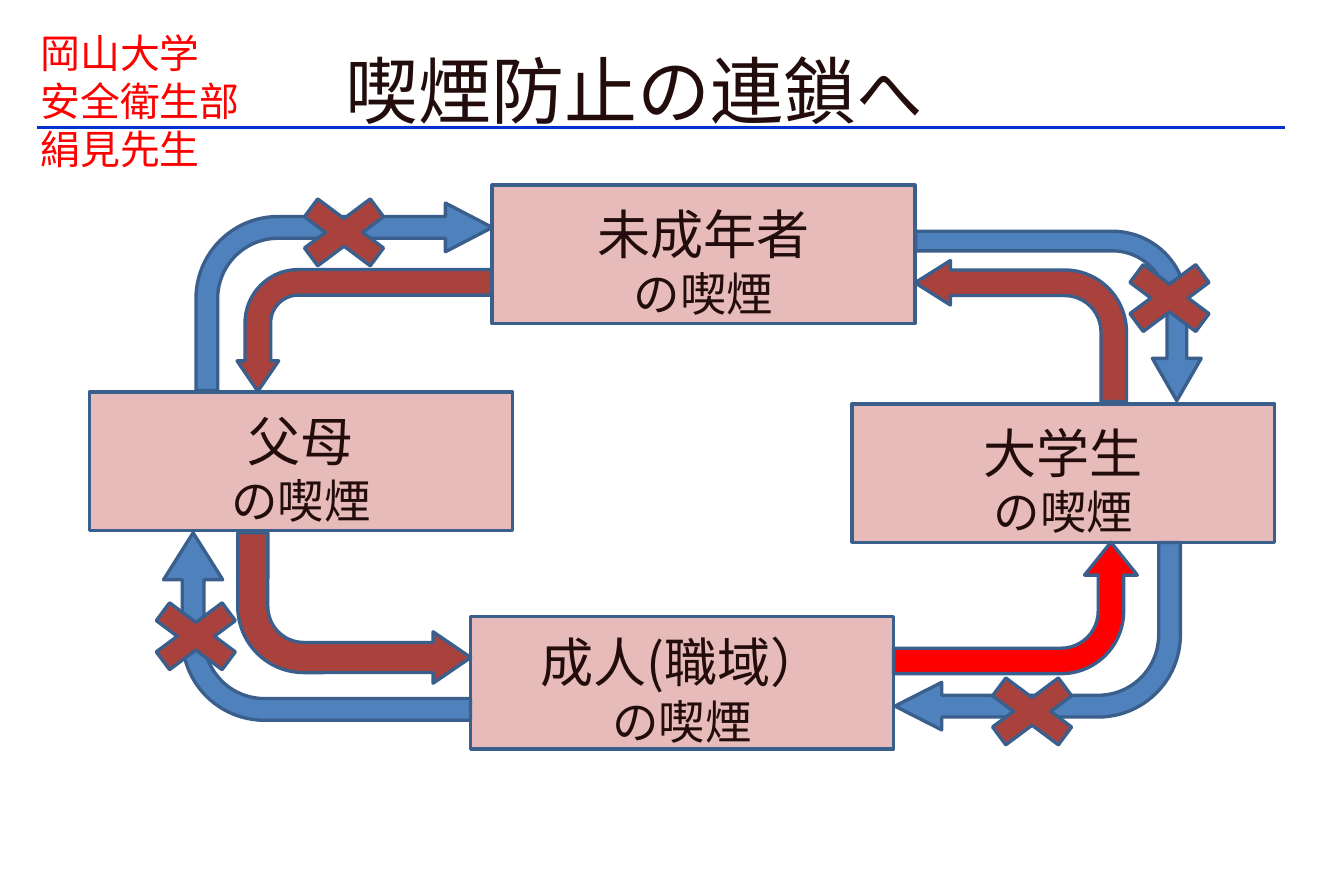
from dataclasses import dataclass

from lxml import etree
from pptx import Presentation
from pptx.dml.color import RGBColor
from pptx.enum.shapes import MSO_CONNECTOR, MSO_SHAPE
from pptx.enum.text import MSO_ANCHOR, PP_ALIGN
from pptx.oxml.ns import qn
from pptx.util import Pt

RECT = MSO_SHAPE.RECTANGLE
BENT_ARROW = MSO_SHAPE.BENT_ARROW
CROSS = MSO_SHAPE.MATH_MULTIPLY
STRAIGHT = MSO_CONNECTOR.STRAIGHT
LEFT, CENTER = PP_ALIGN.LEFT, PP_ALIGN.CENTER
TOP, MIDDLE = MSO_ANCHOR.TOP, MSO_ANCHOR.MIDDLE

CJK, LATIN = "Noto Sans CJK JP", "Lato"
INK, RED, BROWN, BLUE = "220D0C", "FF0000", "A9423D", "4F81BD"
PINK, OUTLINE, RULE = "E6BBB9", "3A5F8C", "0033CC"


@dataclass
class Group:
    name: str
    left: float
    top: float
    height: float = 83.5


@dataclass
class Arrow:
    left: float
    top: float
    width: float
    height: float
    shaft: float
    head: float
    color: str = BLUE
    rotation: int = 0
    flip: bool = False
    bend: float = 0.438


GROUPS = [
    Group("未成年者", 296.6, 111.6),
    Group("父母", 54, 236.2),
    Group("大学生", 513.4, 243.4),
    Group("成人(職域）", 283.7, 371.5, 79.9),
]
ARROWS = [
    # Outer ring, clockwise
    Arrow(118.1, 122.4, 178.6, 113, 0.116, 0.13),
    Arrow(586.8, 104.4, 102.2, 172.1, 0.116, 0.144, rotation=90),
    Arrow(539.3, 326.9, 172.1, 113, 0.116, 0.127, rotation=180),
    Arrow(134.6, 285.1, 113, 185, 0.116, 0.158, rotation=270),
    # Inner ring, anticlockwise
    Arrow(551.5, 157, 127.4, 85, 0.181, 0.158, BROWN, 180, True),
    Arrow(572.4, 293, 79.2, 146.9, 0.194, 0.201, RED, 270, True, 0.476),
    Arrow(182.9, 122.4, 73.4, 153.4, 0.21, 0.171, BROWN, 90, True),
    Arrow(143.3, 321.1, 140.4, 90.7, 0.2, 0.171, BROWN, 0, True),
]
CROSSES = [(583.9, 400.3), (79.9, 355), (169.2, 111.6), (666.7, 151.2)]


def rgb(value: str) -> RGBColor:
    return RGBColor.from_string(value)


def set_attrs(target, values: dict) -> None:
    for name, value in values.items():
        setattr(target, name, value)


def add_run(p, text: str, size: float, color: str, font: str) -> None:
    r = p.add_run()
    r.text = text
    set_attrs(r.font, {"size": Pt(size), "name": font})
    r.font.color.rgb = rgb(color)
    ea = etree.SubElement(r.font._element, qn("a:ea"))
    ea.set("typeface", font)


def add_shape(slide, kind, left: float, top: float, width: float,
              height: float, fill: str):
    sp = slide.shapes.add_shape(kind, Pt(left), Pt(top), Pt(width), Pt(height))
    sp.shadow.inherit = False
    sp.fill.solid()
    sp.fill.fore_color.rgb = rgb(fill)
    sp.line.color.rgb = rgb(OUTLINE)
    sp.line.width = Pt(2)
    return sp


def add_title(slide) -> None:
    sp = slide.shapes.title
    set_attrs(sp, {"left": Pt(200.9), "top": Pt(20.9),
                   "width": Pt(414.7), "height": Pt(60.5)})
    tf = sp.text_frame
    set_attrs(tf, {"vertical_anchor": TOP, "margin_top": Pt(6), "word_wrap": True})
    p = tf.paragraphs[0]
    set_attrs(p, {"alignment": LEFT, "line_spacing": Pt(53)})
    add_run(p, "喫煙防止の連鎖", 44, INK, CJK)
    add_run(p, "へ", 40, INK, CJK)


def add_rule(slide) -> None:
    line = slide.shapes.add_connector(STRAIGHT, Pt(22.3), Pt(77), Pt(774.7), Pt(77))
    line.line.color.rgb = rgb(RULE)
    line.line.width = Pt(1.5)
    etree.SubElement(line.element.spPr, qn("a:effectLst"))


def add_group(slide, group: Group) -> None:
    sp = add_shape(slide, RECT, group.left, group.top, 254.9, group.height, PINK)
    tf = sp.text_frame
    set_attrs(tf, {"vertical_anchor": MIDDLE, "margin_top": Pt(10.8),
                   "word_wrap": True})
    lines = [(group.name, 32, 39), ("の喫煙", 28, 33.5)]
    for i, (text, size, spacing) in enumerate(lines):
        p = tf.add_paragraph() if i else tf.paragraphs[0]
        set_attrs(p, {"alignment": CENTER, "line_spacing": Pt(spacing)})
        add_run(p, text, size, INK, CJK)


def add_arrow(slide, arrow: Arrow) -> None:
    sp = add_shape(slide, BENT_ARROW, arrow.left, arrow.top,
                   arrow.width, arrow.height, arrow.color)
    for i, value in enumerate((arrow.shaft, arrow.head, 0.25, arrow.bend)):
        sp.adjustments[i] = value
    sp.rotation = arrow.rotation
    if arrow.flip:
        sp.element.spPr.find(qn("a:xfrm")).set("flipV", "1")


def add_affiliation(slide) -> None:
    sp = slide.shapes.add_textbox(Pt(17.3), Pt(13.7), Pt(135.4), Pt(94.3))
    tf = sp.text_frame
    tf.word_wrap = False
    for i, text in enumerate(("岡山大学", "安全衛生部", "絹見先生")):
        p = tf.add_paragraph() if i else tf.paragraphs[0]
        p.alignment = LEFT
        add_run(p, text, 24, RED, LATIN)


def main() -> None:
    prs = Presentation()
    set_attrs(prs, {"slide_width": Pt(810), "slide_height": Pt(540)})
    slide = prs.slides.add_slide(prs.slide_layouts.get_by_name("Title Only"))

    # Heading
    add_title(slide)
    add_rule(slide)

    # Cycle of smoking groups
    for group in GROUPS:
        add_group(slide, group)
    for arrow in ARROWS:
        add_arrow(slide, arrow)

    # Crosses that break the outer ring
    for left, top in CROSSES:
        add_shape(slide, CROSS, left, top, 76.3, 56.9, BROWN)

    add_affiliation(slide)
    prs.save("out.pptx")


if __name__ == "__main__":
    main()
